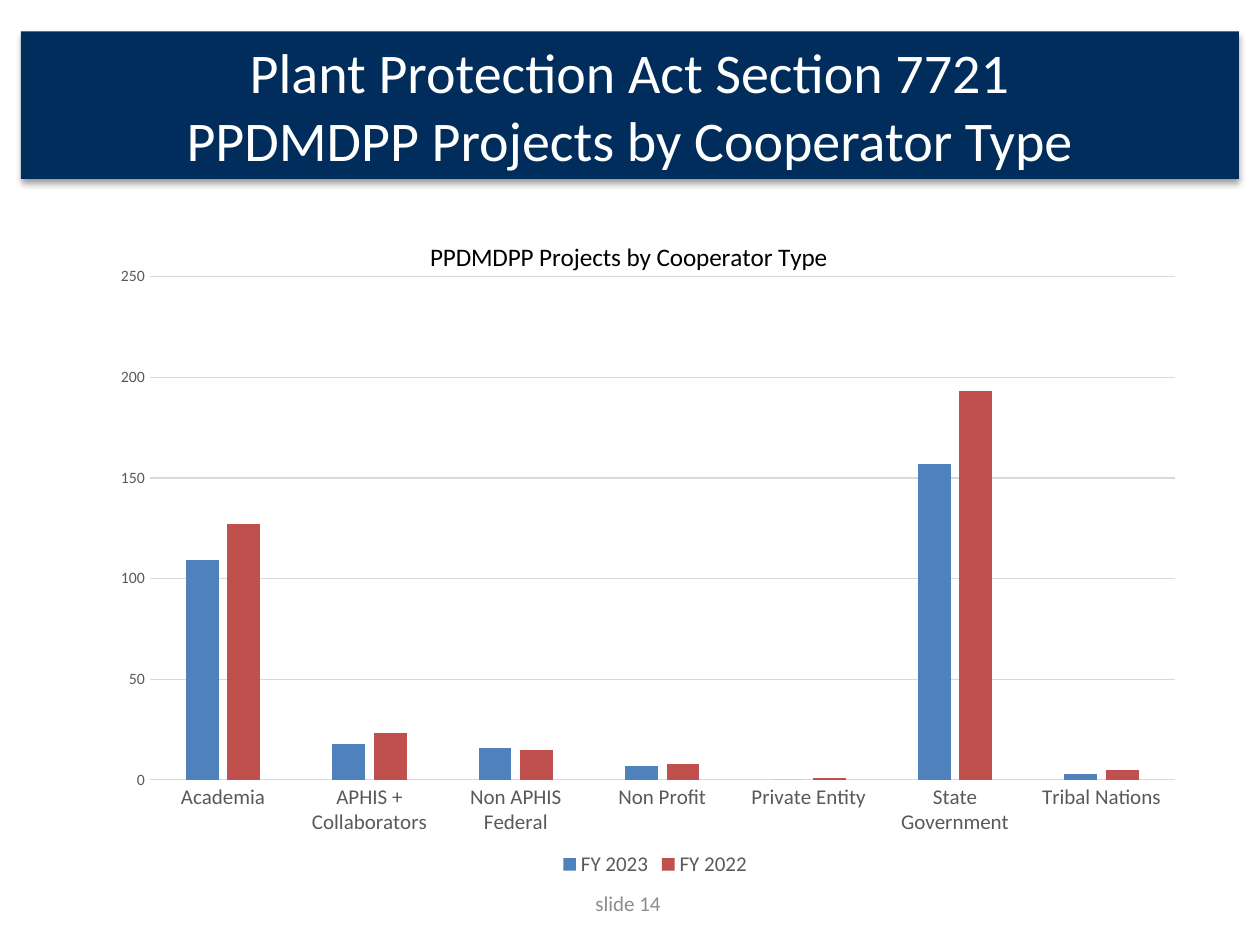
from dataclasses import dataclass
from lxml.etree import SubElement
from pptx import Presentation
from pptx.chart.data import CategoryChartData
from pptx.dml.color import RGBColor
from pptx.enum.chart import XL_CHART_TYPE, XL_LEGEND_POSITION, XL_TICK_MARK
from pptx.enum.shapes import MSO_SHAPE
from pptx.enum.text import MSO_ANCHOR, PP_ALIGN
from pptx.oxml import parse_xml
from pptx.oxml.ns import nsdecls, qn
from pptx.util import Inches, Pt


@dataclass(frozen=True)
class Theme:
    font: str = "Calibri"
    banner: str = "002D5B"
    white: str = "FFFFFF"
    black: str = "000000"
    label: str = "595959"
    footer: str = "8C8C8C"
    grid: str = "D9D9D9"
    series: tuple = ("4F81BD", "C0504D")
    heading_size: float = 32
    chart_title_size: float = 14.4
    label_size: float = 12
    value_size: float = 9
    line_width: float = 0.75


THEME = Theme()
SLIDE_WIDTH, SLIDE_HEIGHT = Inches(10), Inches(7.5)
CATEGORIES = (
    "Academia", "APHIS + Collaborators", "Non APHIS Federal", "Non Profit",
    "Private Entity", "State Government", "Tribal Nations",
)
PROJECTS = {
    "FY 2023": (109, 18, 16, 7, 0, 157, 3),
    "FY 2022": (127, 23, 15, 8, 1, 193, 5),
}


def share_box(left, top, width, height):
    return (
        round(SLIDE_WIDTH * left / 100), round(SLIDE_HEIGHT * top / 100),
        round(SLIDE_WIDTH * width / 100), round(SLIDE_HEIGHT * height / 100),
    )


def format_font(font, size, color):
    font.name = THEME.font
    font.size = Pt(size)
    font.bold = False
    font.color.rgb = RGBColor.from_string(color)


def format_line(line):
    line.color.rgb = RGBColor.from_string(THEME.grid)
    line.width = Pt(THEME.line_width)


def write_text(text_frame, text, size, color, align=PP_ALIGN.CENTER, anchor=None):
    if anchor is not None:
        text_frame.word_wrap = True
        text_frame.vertical_anchor = anchor
    paragraph = text_frame.paragraphs[0]
    paragraph.text = text
    paragraph.alignment = align
    for run in paragraph.runs:
        format_font(run.font, size, color)


def add_soft_shadow(shape):
    shape.shadow.inherit = False
    effects = shape.element.spPr.find(qn("a:effectLst"))
    shadow = SubElement(
        effects, qn("a:outerShdw"), blurRad=str(Pt(4)), dist=str(Pt(2)),
        dir="5400000", rotWithShape="0",
    )
    color = SubElement(shadow, qn("a:srgbClr"), val=THEME.black)
    SubElement(color, qn("a:alpha"), val="38000")


def add_banner(slide, box, text):
    banner = slide.shapes.add_shape(MSO_SHAPE.RECTANGLE, *box)
    banner.fill.solid()
    banner.fill.fore_color.rgb = RGBColor.from_string(THEME.banner)
    banner.line.fill.background()
    add_soft_shadow(banner)
    write_text(banner.text_frame, text, THEME.heading_size, THEME.white,
               anchor=MSO_ANCHOR.MIDDLE)


def add_footer(slide, box, text):
    footer = slide.shapes.add_textbox(*box)
    write_text(footer.text_frame, text, THEME.label_size, THEME.footer,
               anchor=MSO_ANCHOR.MIDDLE)


def manual_layout(target="", **shares):
    inner = f'<c:layoutTarget val="{target}"/>' if target else ""
    modes = "".join(f'<c:{side}Mode val="edge"/>' for side in "xy")
    values = "".join(f'<c:{name} val="{value}"/>' for name, value in shares.items())
    return parse_xml(
        f'<c:layout {nsdecls("c")}><c:manualLayout>{inner}{modes}{values}'
        "</c:manualLayout></c:layout>"
    )


def place_chart_parts(chart):
    plot_area = chart.element.chart.plotArea
    title = chart.chart_title.element
    for parent, layout, index in (
        (plot_area, manual_layout("inner", x=0.038, y=0.092, w=0.937, h=0.755), 0),
        (title, manual_layout(x=0.29, y=0.03), 1),
    ):
        for existing in parent.findall(qn("c:layout")):
            parent.remove(existing)
        parent.insert(index, layout)


def format_axes(chart):
    for axis, size in (
        (chart.category_axis, THEME.label_size),
        (chart.value_axis, THEME.value_size),
    ):
        axis.major_tick_mark = XL_TICK_MARK.NONE
        axis.minor_tick_mark = XL_TICK_MARK.NONE
        format_font(axis.tick_labels.font, size, THEME.label)
    format_line(chart.category_axis.format.line)
    value_axis = chart.value_axis
    value_axis.minimum_scale, value_axis.maximum_scale = 0, 250
    value_axis.major_unit = 50
    value_axis.format.line.fill.background()
    value_axis.has_major_gridlines = True
    format_line(value_axis.major_gridlines.format.line)


def add_project_chart(slide, box, title):
    chart_data = CategoryChartData()
    chart_data.categories = CATEGORIES
    for name, values in PROJECTS.items():
        chart_data.add_series(name, values)
    chart = slide.shapes.add_chart(
        XL_CHART_TYPE.COLUMN_CLUSTERED, *box, chart_data
    ).chart
    format_font(chart.font, 10, THEME.black)
    chart.has_title = True
    write_text(chart.chart_title.text_frame, title, THEME.chart_title_size, THEME.black)
    chart.has_legend = True
    chart.legend.position = XL_LEGEND_POSITION.BOTTOM
    chart.legend.include_in_layout = False
    format_font(chart.legend.font, THEME.label_size, THEME.label)
    plot = chart.plots[0]
    plot.gap_width, plot.overlap = 219, -27
    plot.vary_by_categories = False
    for series, color in zip(plot.series, THEME.series):
        series.format.fill.solid()
        series.format.fill.fore_color.rgb = RGBColor.from_string(color)
    format_axes(chart)
    place_chart_parts(chart)


def main():
    presentation = Presentation()
    presentation.slide_width, presentation.slide_height = SLIDE_WIDTH, SLIDE_HEIGHT
    slide = presentation.slides.add_slide(presentation.slide_layouts[6])
    subject = "PPDMDPP Projects by Cooperator Type"
    add_footer(slide, share_box(38.2, 92.93, 23.3, 5.33), "slide 14")
    add_banner(slide, share_box(1.67, 3.33, 96.67, 15.6),
               f"Plant Protection Act Section 7721\v{subject}")
    add_project_chart(slide, share_box(8.6, 22.8, 86.8, 70.53), subject)
    presentation.save("out.pptx")


if __name__ == "__main__":
    main()
